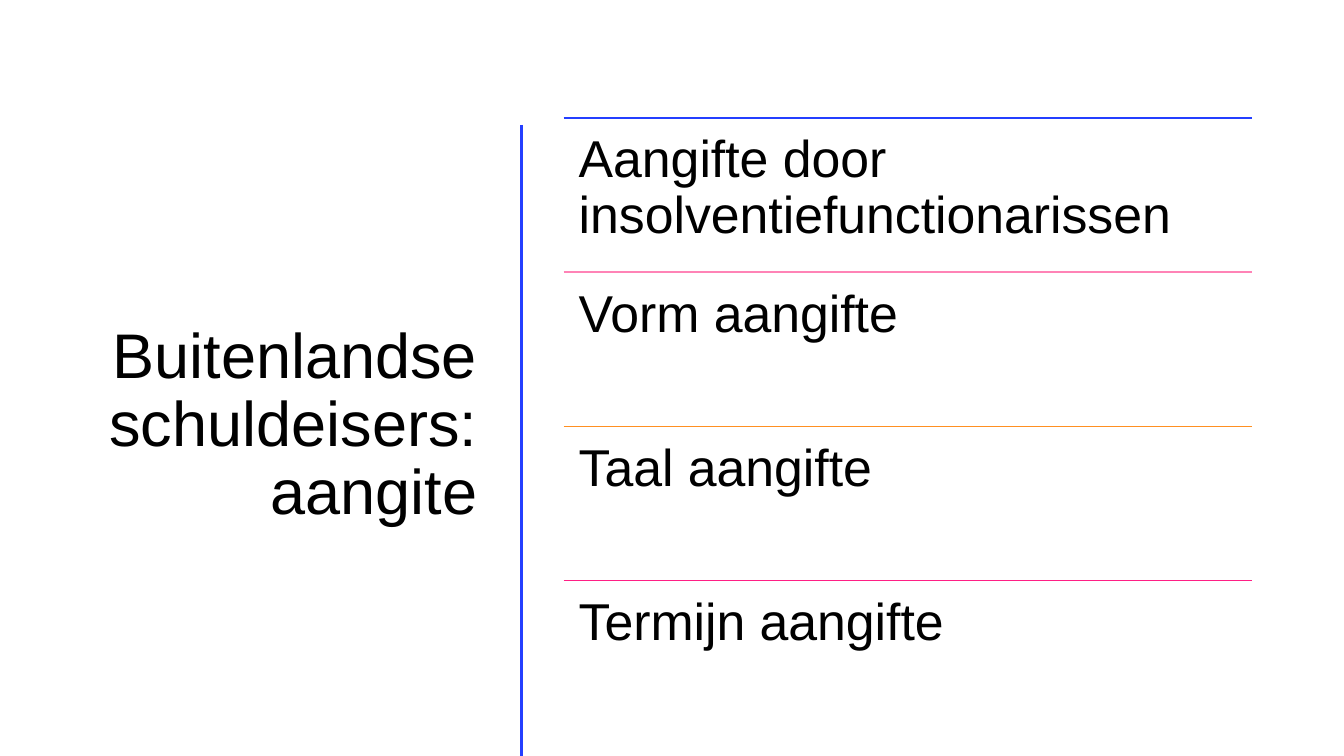
"""Builds a slide on claims by foreign creditors, with a title beside four ruled topics."""
import pptx
import pptx.util
import pptx.dml.color
import pptx.enum.shapes
import pptx.enum.text

TITLE = "Buitenlandse schuldeisers: aangite"
TOPICS = [
    ("Aangifte door insolventiefunctionarissen", "243FFF"),
    ("Vorm aangifte", "FF83B6"),
    ("Taal aangifte", "FF9022"),
    ("Termijn aangifte", "FF1F85"),
]
THEME = {"font": "Arial", "text": "000000", "divider": "243FFF", "title": 45, "topic": 37}

WIDTH, HEIGHT = 13.33, 7.5
TOP = 1.17
TITLE_AREA = (0.52, TOP, 4.31, 6.11)
DIVIDER_LEFT, DIVIDER_TOP = 5.17, 1.24
TOPIC_LEFT, TOPIC_WIDTH, ROW_HEIGHT = 5.59, 6.83, 1.53

inches = pptx.util.Inches
color = pptx.dml.color.RGBColor.from_string


def add_rule(page, start, end, rgb, weight):
    """Draws a straight line without a shadow."""
    rule = page.shapes.add_connector(
        pptx.enum.shapes.MSO_CONNECTOR.STRAIGHT, *map(inches, start + end))
    rule.line.color.rgb = color(rgb)
    rule.line.width = pptx.util.Pt(weight)
    effects = pptx.oxml.parse_xml(
        '<a:effectLst xmlns:a="http://schemas.openxmlformats.org/drawingml/2006/main"/>')
    rule._element.spPr.append(effects)


def add_text(page, area, text, size, inset, anchor, align):
    """Adds a wrapped text box with one paragraph."""
    frame = page.shapes.add_textbox(*map(inches, area)).text_frame
    frame.word_wrap = True
    frame.vertical_anchor = anchor
    frame.margin_left = frame.margin_right = inches(inset[0])
    frame.margin_top = frame.margin_bottom = inches(inset[1])
    para = frame.paragraphs[0]
    para.text = text
    para.alignment = align
    para.line_spacing = 0.9
    para.font.name = THEME["font"]
    para.font.size = pptx.util.Pt(size)
    para.font.color.rgb = color(THEME["text"])


def main():
    """Lays out the title, the divider and the topics, then saves the deck."""
    anchors, aligns = pptx.enum.text.MSO_ANCHOR, pptx.enum.text.PP_ALIGN
    deck = pptx.Presentation()
    deck.slide_width, deck.slide_height = inches(WIDTH), inches(HEIGHT)
    page = deck.slides.add_slide(deck.slide_layouts[6])

    add_text(page, TITLE_AREA, TITLE, THEME["title"], (0.1, 0.05),
             anchors.MIDDLE, aligns.RIGHT)
    add_rule(page, (DIVIDER_LEFT, DIVIDER_TOP), (DIVIDER_LEFT, HEIGHT), THEME["divider"], 2)

    for row, (topic, rgb) in enumerate(TOPICS):
        top = TOP + row * ROW_HEIGHT
        add_rule(page, (TOPIC_LEFT, top), (TOPIC_LEFT + TOPIC_WIDTH, top), rgb, 1)
        add_text(page, (TOPIC_LEFT, top, TOPIC_WIDTH, ROW_HEIGHT), topic,
                 THEME["topic"], (0.15, 0.15), anchors.TOP, aligns.LEFT)

    deck.save("out.pptx")


if __name__ == "__main__":
    main()
